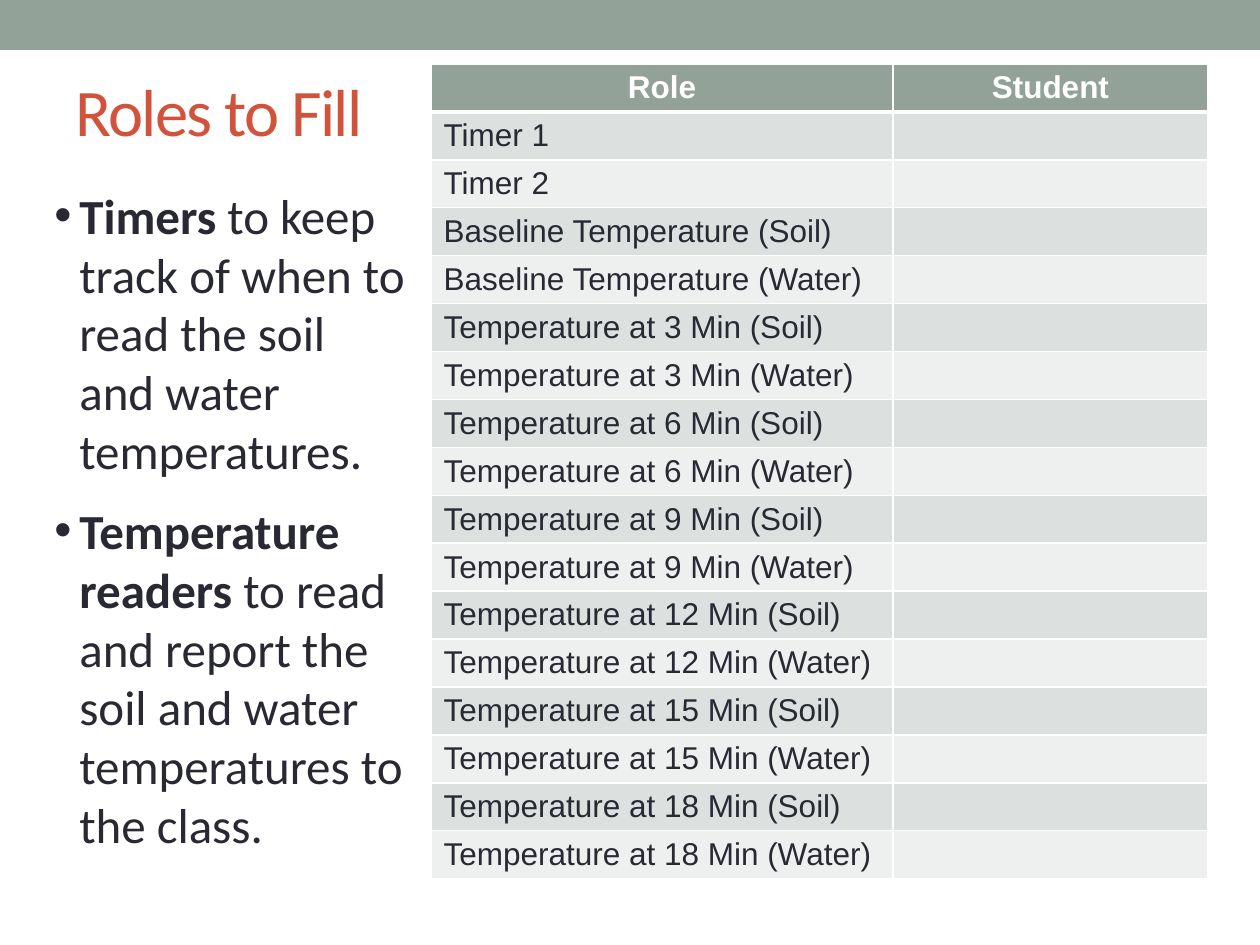
import pptx
import pptx.util
import pptx.dml.color
import pptx.enum.shapes
import pptx.enum.text
import pptx.oxml
import pptx.oxml.ns
import lxml.etree

HEADS = ["Role", "Student"]
STAGES = ["Baseline Temperature"] + [f"Temperature at {t} Min" for t in (3, 6, 9, 12, 15, 18)]
ROLES = ["Timer 1", "Timer 2"] + [f"{s} ({m})" for s in STAGES for m in ("Soil", "Water")]
DUTIES = [
    ("Timers", " to keep track of when to read the soil and water temperatures."),
    ("Temperature readers ", "to read and report the soil and water temperatures to the class."),
]
SAGE, INK, RUST, WHITE = "93A299", "292934", "D2533C", "FFFFFF"
BANDS = ["DCE0DE", "EEF0EF"]
WIDTHS = [462, 315]
ROW = 47
ALIGN = pptx.enum.text.PP_ALIGN


def px(n):
    return pptx.util.Emu(round(n * 914400 / 126))


def tint(code):
    return pptx.dml.color.RGBColor.from_string(code)


def style(font, name, size, color, bold=None):
    font.name, font.size, font.bold = name, pptx.util.Pt(size), bold
    font.color.rgb = tint(color)


def paint(fill, color):
    fill.solid()
    fill.fore_color.rgb = tint(color)


def child(parent, tag, **attrs):
    node = lxml.etree.SubElement(parent, pptx.oxml.ns.qn(tag))
    for key, value in attrs.items():
        node.set(key, str(value))
    return node


def border(cell, top, bottom):
    props = cell._tc.get_or_add_tcPr()
    for tag, width in (("a:lnL", 1), ("a:lnR", 1), ("a:lnT", top), ("a:lnB", bottom)):
        line = child(props, tag, w=pptx.util.Pt(width))
        child(child(line, "a:solidFill"), "a:srgbClr", val=WHITE)


def add_bar(slide):
    bar = slide.shapes.add_shape(
        pptx.enum.shapes.MSO_SHAPE.RECTANGLE, 0, 0, px(1260), px(50))
    bar.shadow.inherit = False
    paint(bar.fill, SAGE)
    bar.line.fill.background()


def add_title(slide):
    title = slide.shapes.title
    title.left, title.top, title.width, title.height = map(px, (63, 73, 336, 73))
    frame = title.text_frame
    frame.text = "Roles to Fill"
    frame.vertical_anchor = pptx.enum.text.MSO_ANCHOR.MIDDLE
    para = frame.paragraphs[0]
    para.alignment = ALIGN.LEFT
    run = para.runs[0]
    style(run.font, "Calibri", 38, RUST)
    run._r.get_or_add_rPr().set("spc", "-100")


def add_roles(slide):
    rows = [HEADS] + [[role, ""] for role in ROLES]
    table = slide.shapes.add_table(
        len(rows), len(HEADS), px(431), px(64), px(sum(WIDTHS)), px(ROW * len(rows))).table
    for col, width in zip(table.columns, WIDTHS):
        col.width = px(width)
    for r, texts in enumerate(rows):
        table.rows[r].height = px(ROW)
        head = r == 0
        for c, text in enumerate(texts):
            cell = table.cell(r, c)
            cell.text = text
            para = cell.text_frame.paragraphs[0]
            para.alignment = ALIGN.CENTER if head else ALIGN.LEFT
            style(para.font, "Arial", 18, WHITE if head else INK, head)
            border(cell, 3 if r == 1 else 1, 3 if head else 1)
            paint(cell.fill, SAGE if head else BANDS[(r - 1) % 2])


def add_duties(slide):
    frame = slide.shapes.add_textbox(px(42), px(179), px(378), px(687)).text_frame
    frame.word_wrap = True
    frame.auto_size = pptx.enum.text.MSO_AUTO_SIZE.SHAPE_TO_FIT_TEXT
    for i, (lead, rest) in enumerate(DUTIES):
        para = frame.add_paragraph() if i else frame.paragraphs[0]
        props = para._p.get_or_add_pPr()
        props.set("marL", str(px(25)))
        props.set("indent", str(px(-25)))
        child(props, "a:buFont", typeface="Arial")
        child(props, "a:buChar", char="•")
        if i:
            para.space_before = pptx.util.Pt(12)
        style(para.font, "Calibri", 28, INK)
        for text, bold in ((lead, True), (rest, False)):
            run = para.add_run()
            run.text = text
            run.font.bold = bold


def main():
    deck = pptx.Presentation()
    deck.slide_width, deck.slide_height = px(1260), px(945)
    slide = deck.slides.add_slide(deck.slide_layouts[5])
    add_bar(slide)
    add_title(slide)
    add_roles(slide)
    add_duties(slide)
    deck.save("out.pptx")


if __name__ == "__main__":
    main()
